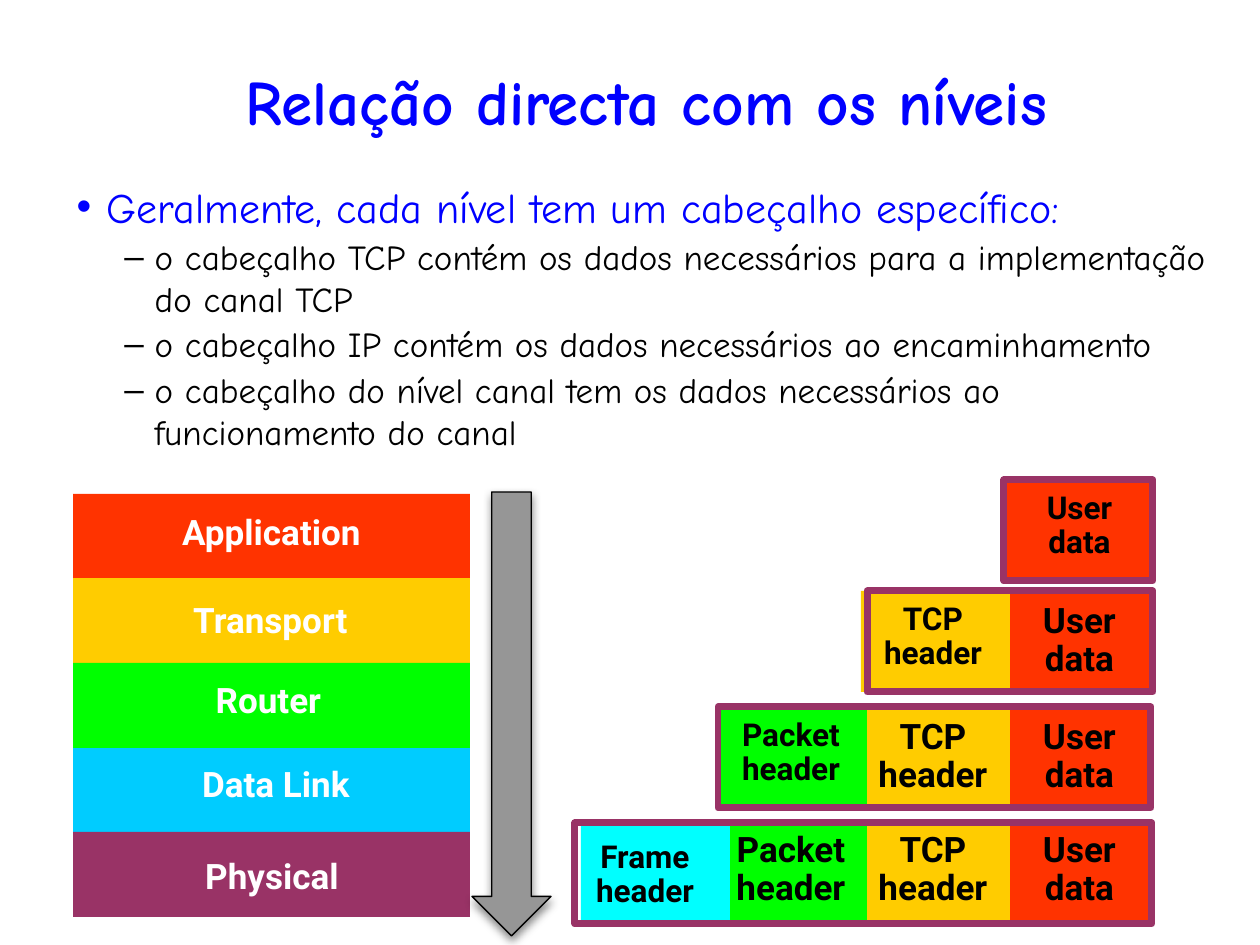
from dataclasses import dataclass

from lxml import etree
from pptx import Presentation
from pptx import util as u
from pptx.dml.color import RGBColor
from pptx.enum import shapes, text
from pptx.oxml.ns import qn

PX = 914400 / 126
BLUE, BLACK, WHITE, PLUM = "0000FF", "000000", "FFFFFF", "993366"
CELL_W, CELL_H = 149, 101


@dataclass
class Level:
    name: str
    fill: str
    left: int
    top: int
    width: int


@dataclass
class Part:
    lines: tuple[str, ...]  # one paragraph each
    fill: str
    left: int
    centre: int
    label_w: int  # label width at 20 pt
    drop: int = 0
    label_gap: int = 6


@dataclass
class Unit:
    """One row: the first `count` parts inside a frame."""
    count: int
    top: int
    frame_left: int
    frame_top: int
    frame_w: int


def px(value: float) -> u.Emu:
    return u.Emu(round(value * PX))


def colour(value: str) -> RGBColor:
    return RGBColor.from_string(value)


def place(shape, left: int, top: int, width: int, height: int) -> None:
    shape.left, shape.top = px(left), px(top)
    shape.width, shape.height = px(width), px(height)


def write(paragraph, wording: str, *, size: int, font: str = "Roboto",
          fill: str = BLACK, bold: bool = True, align=None,
          spacing: float | None = None) -> None:
    paragraph.text = wording
    paragraph.alignment = align
    paragraph.line_spacing = spacing
    for run in paragraph.runs:
        run.font.size, run.font.name, run.font.bold = u.Pt(size), font, bold
        run.font.color.rgb = colour(fill)


def add_box(slide, left: int, top: int, width: int, height: int, *,
            fill: str | None = None, line: str | None = None,
            weight: float = 4, kind=shapes.MSO_SHAPE.RECTANGLE):
    box = slide.shapes.add_shape(kind, px(left), px(top), px(width), px(height))
    box.shadow.inherit = False
    if fill:
        box.fill.solid()
        box.fill.fore_color.rgb = colour(fill)
    else:
        box.fill.background()
    if line:
        box.line.color.rgb = colour(line)
        box.line.width = u.Pt(weight)
    else:
        box.line.fill.background()
    return box


def add_label(slide, lines: tuple[str, ...], left: int, top: int, width: int,
              height: int, **style) -> None:
    frame = slide.shapes.add_textbox(
        px(left), px(top), px(width), px(height)).text_frame
    frame.word_wrap = False
    frame.auto_size = text.MSO_AUTO_SIZE.SHAPE_TO_FIT_TEXT
    for i, wording in enumerate(lines):
        paragraph = frame.add_paragraph() if i else frame.paragraphs[0]
        write(paragraph, wording, align=text.PP_ALIGN.CENTER, **style)


def add_part(slide, part: Part, top: int, is_new: bool) -> None:
    top += part.drop
    add_box(slide, part.left, top, CELL_W, CELL_H, fill=part.fill)
    size, height = (18, 82) if is_new else (20, 88)
    width = round(25 + (part.label_w - 25) * size / 20)
    add_label(slide, part.lines, part.centre - width // 2, top + part.label_gap,
              width, height, size=size, spacing=0.9)


def add_bullet(paragraph, mark: str, indent: float) -> None:
    properties = paragraph._p.get_or_add_pPr()
    properties.set("marL", str(u.Inches(indent)))
    properties.set("indent", str(u.Inches(-0.24)))
    etree.SubElement(properties, qn("a:buChar")).set("char", mark)


def add_soft_shadow(shape) -> None:
    effects = shape._element.spPr.find(qn("a:effectLst"))
    shadow = etree.SubElement(effects, qn("a:outerShdw"), blurRad=str(u.Pt(5)),
                              dist=str(u.Pt(2.4)), dir="5400000", rotWithShape="0")
    tint = etree.SubElement(shadow, qn("a:srgbClr"), val=BLACK)
    etree.SubElement(tint, qn("a:alpha"), val="45000")


POINTS = [
    "o cabeçalho TCP contém os dados necessários para a implementação do canal TCP",
    "o cabeçalho IP contém os dados necessários ao encaminhamento",
    "o cabeçalho do nível canal tem os dados necessários ao funcionamento do canal",
]
LEVELS = [
    Level("Application", "FF3300", 164, 504, 215),
    Level("Transport", "FFCC00", 176, 592, 189),
    Level("Router", "00FF00", 199, 672, 139),
    Level(" Data Link", "00CCFF", 175, 756, 193),
    Level("Physical", PLUM, 188, 848, 168),
]
PARTS = [
    Part(("User", "data"), "FF3300", 1004, 1079, 103),
    Part(("TCP\nheader",), "FFCC00", 861, 933, 140),
    Part(("Packet\nheader",), "00FF00", 718, 791, 140),
    Part(("Frame\nheader",), "00FFFF", 581, 645, 140, drop=5, label_gap=10),
]
UNITS = [
    Unit(4, 820, 575, 823, 577),
    Unit(3, 707, 718, 707, 433),
    Unit(2, 591, 867, 591, 286),
    Unit(1, 480, 1004, 480, 149),
]


def main() -> None:
    deck = Presentation()
    deck.slide_width, deck.slide_height = u.Inches(10), u.Inches(7.5)
    slide = deck.slides.add_slide(deck.slide_layouts[1])

    # Title
    title = slide.shapes.title
    place(title, 84, 32, 1124, 136)
    title.text_frame.auto_size = text.MSO_AUTO_SIZE.NONE
    title.text_frame.vertical_anchor = text.MSO_ANCHOR.MIDDLE
    write(title.text_frame.paragraphs[0], "Relação directa com os níveis", size=36,
          font="Comic Neue", fill=BLUE, align=text.PP_ALIGN.CENTER)

    # Bulleted list
    body = slide.placeholders[1]
    place(body, 64, 175, 1160, 252)
    outline = body.text_frame
    outline.auto_size = text.MSO_AUTO_SIZE.NONE
    heading = outline.paragraphs[0]
    write(heading, "Geralmente, cada nível tem um cabeçalho específico:", size=24,
          font="Comic Neue", fill=BLUE, bold=False)
    heading.space_before = u.Pt(0)
    add_bullet(heading, "•", 0.24)
    for wording in POINTS:
        point = outline.add_paragraph()
        point.level = 1
        write(point, wording, size=20, font="Comic Neue", bold=False)
        point.space_before = u.Pt(2)
        add_bullet(point, "–", 0.62)

    # Protocol stack
    for i, level in enumerate(LEVELS):
        add_box(slide, 73, 494 + 847 * i // 10, 397, 85, fill=level.fill)
    for level in LEVELS:
        add_label(slide, (level.name,), level.left, level.top, level.width, 54,
                  size=20, fill=WHITE)

    # Encapsulated data, one more header per row
    for unit in UNITS:
        for i, part in enumerate(PARTS[:unit.count]):
            add_part(slide, part, unit.top, is_new=i == unit.count - 1)
        add_box(slide, unit.frame_left, unit.frame_top, unit.frame_w, CELL_H,
                line=PLUM)

    # Downward arrow
    arrow = add_box(slide, 472, 492, 79, 444, fill="969696", line=BLACK,
                    weight=0.79, kind=shapes.MSO_SHAPE.DOWN_ARROW)
    add_soft_shadow(arrow)

    deck.save("out.pptx")


if __name__ == "__main__":
    main()
